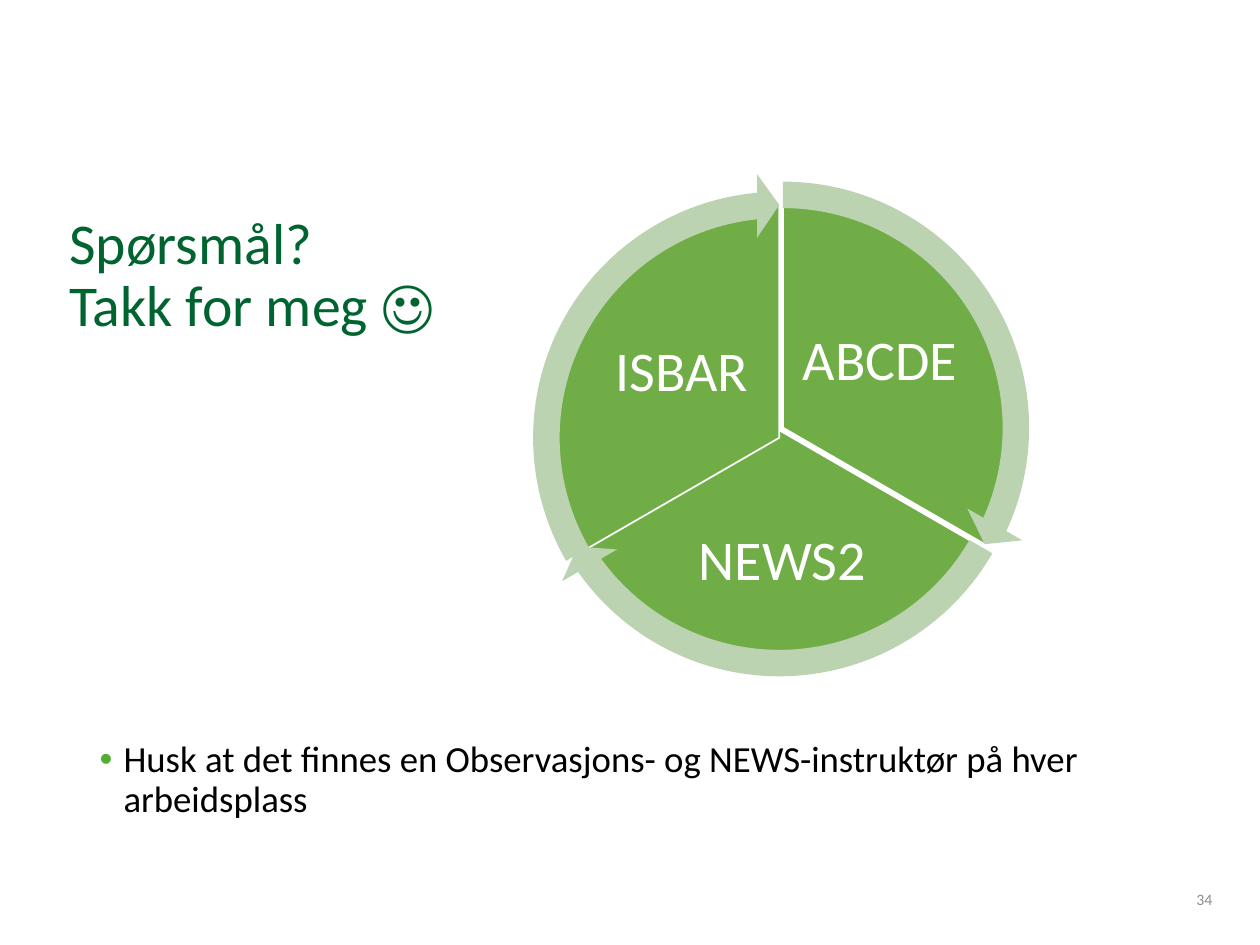
from pptx import Presentation
from pptx.dml.color import RGBColor
from pptx.enum.shapes import MSO_SHAPE
from pptx.enum.text import MSO_ANCHOR, MSO_AUTO_SIZE, PP_ALIGN
from pptx.oxml import parse_xml
from pptx.oxml.ns import nsdecls
from pptx.util import Inches, Pt

COLORS = {
    "title": "006430", "body": "000000", "bullet": "50AF31", "number": "8C8C8C",
    "sector": "70AD47", "arrow": "BBD3B1", "white": "FFFFFF",
}


def color(name):
    return RGBColor.from_string(COLORS[name])


def write(box, text, size, shade, align=PP_ALIGN.LEFT, anchor=MSO_ANCHOR.MIDDLE):
    frame = box.text_frame
    frame.text = text
    frame.word_wrap = True
    frame.auto_size = MSO_AUTO_SIZE.NONE
    frame.vertical_anchor = anchor
    paragraph = frame.paragraphs[0]
    paragraph.alignment = align
    paragraph.line_spacing = 0.9
    paragraph.space_before = Pt(0)
    for span in paragraph.runs:
        span.font.name = "Calibri"
        span.font.size = Pt(size)
        span.font.color.rgb = color(shade)
    return frame


deck = Presentation()
deck.slide_width, deck.slide_height = Inches(10), Inches(7.5)
page = deck.slides.add_slide(deck.slide_layouts[1])

# Title
title = page.shapes.title
title.left, title.top = Inches(0.45), Inches(1.47)
title.width, title.height = Inches(8.62), Inches(1.45)
write(title, "Spørsmål?\vTakk for meg ☺", 33, "title")

# Reminder, resting at the foot of the body
body = page.placeholders[1]
body.left, body.top = Inches(0.69), Inches(2)
body.width, body.height = Inches(8.62), Inches(4.76)
body.text_frame.margin_bottom = Inches(0.25)
reminder = write(
    body,
    "Husk at det finnes en Observasjons- og NEWS-instruktør på hver arbeidsplass",
    21, "body", anchor=MSO_ANCHOR.BOTTOM,
).paragraphs[0]
properties = reminder._p.get_or_add_pPr()
properties.set("marL", str(Inches(0.19)))
properties.set("indent", str(-Inches(0.19)))
for bullet in (
    f'<a:buClr {nsdecls("a")}><a:srgbClr val="{COLORS["bullet"]}"/></a:buClr>',
    f'<a:buFont {nsdecls("a")} typeface="Arial"/>',
    f'<a:buChar {nsdecls("a")} char="•"/>',
):
    properties.append(parse_xml(bullet))

# Slide number
number = page.shapes.add_textbox(Inches(9.31), Inches(6.95), Inches(0.41), Inches(0.4))
write(number, "34", 9, "number", PP_ALIGN.RIGHT)

# Cycle: label, sector left and top, sector angles, label box, arrow angles
PIE, RING = 3.73, 4.2
OVERHANG = (RING - PIE) / 2
sectors = [
    ("ABCDE", 4.35, 1.53, (162, 18), (6.32, 2.32, 1.33, 1.11), (14.73, 161.99)),
    ("NEWS2", 4.32, 1.55, (18, 90), (5.21, 3.97, 2, 0.98), (86.72, 18.01)),
    ("ISBAR", 4.32, 1.61, (90, 162), (4.75, 2.41, 1.33, 1.11), (158.73, 90)),
]
cycle = page.shapes.add_group_shape().shapes

# Sectors with their labels
for label, left, top, angles, place, _ in sectors:
    pie = cycle.add_shape(MSO_SHAPE.PIE, Inches(left), Inches(top), Inches(PIE), Inches(PIE))
    pie.adjustments[0], pie.adjustments[1] = angles
    pie.shadow.inherit = False
    pie.fill.solid()
    pie.fill.fore_color.rgb = color("sector")
    pie.line.color.rgb = color("white")
    pie.line.width = Pt(1)

    box = cycle.add_textbox(*map(Inches, place))
    frame = write(box, label, 32, "white", PP_ALIGN.CENTER)
    frame.margin_left = frame.margin_right = Inches(0.04)
    frame.margin_top = frame.margin_bottom = Inches(0.04)

# Arrows around the sectors
for _, left, top, _, _, (end, start) in sectors:
    arrow = cycle.add_shape(
        MSO_SHAPE.CIRCULAR_ARROW, Inches(left - OVERHANG), Inches(top - OVERHANG),
        Inches(RING), Inches(RING),
    )
    for index, value in enumerate((0.05, 3.28, end, start, 0.06)):
        arrow.adjustments[index] = value
    arrow.shadow.inherit = False
    arrow.fill.solid()
    arrow.fill.fore_color.rgb = color("arrow")
    arrow.line.fill.background()

deck.save("out.pptx")
